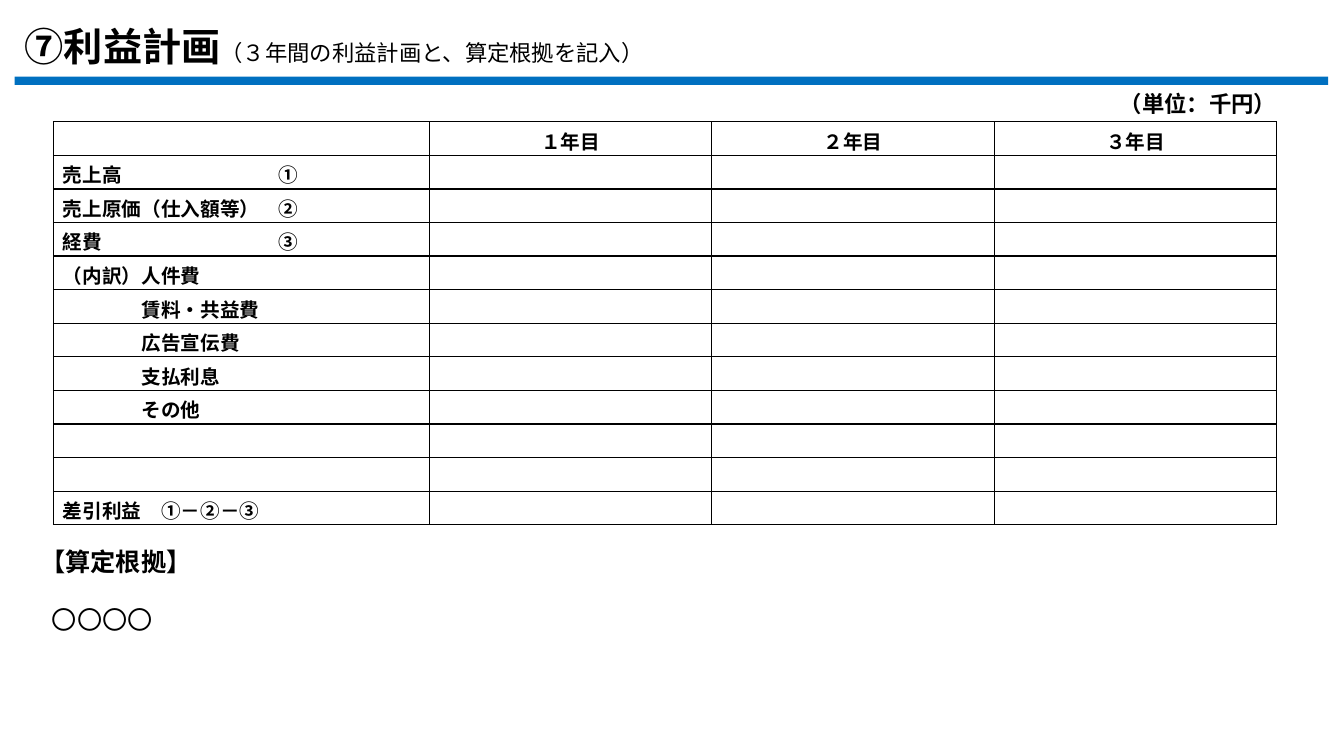
from dataclasses import dataclass

from lxml import etree
from pptx import Presentation
from pptx.dml.color import RGBColor
from pptx.enum.shapes import MSO_SHAPE
from pptx.enum.text import MSO_ANCHOR, MSO_AUTO_SIZE, PP_ALIGN
from pptx.oxml.ns import qn
from pptx.util import Emu, Pt

EMU_PER_PX = 9525
FONT = "Noto Sans CJK JP"
COLORS = {"text": "000000", "bar": "0070C0", "cell": "FFFFFF", "border": "000000"}
RECTANGLE = MSO_SHAPE.RECTANGLE
MIDDLE = MSO_ANCHOR.MIDDLE
TOP = MSO_ANCHOR.TOP
LEFT = PP_ALIGN.LEFT
CENTER = PP_ALIGN.CENTER
NO_AUTOFIT = MSO_AUTO_SIZE.NONE

TABLE_SIZE = 14
ROW_HEIGHT = 32
COLUMN_WIDTHS = (358, 269, 269, 269)
NUMBER_TAB = 205
BREAKDOWN_INDENT = 75


@dataclass(frozen=True)
class Box:
    left: int
    top: int
    width: int
    height: int


@dataclass(frozen=True)
class Run:
    text: str
    size: int
    bold: bool = True


@dataclass(frozen=True)
class Label:
    box: Box
    run: Run


@dataclass(frozen=True)
class Item:
    text: str = ""
    indent: int = 0


TITLE_BOX = Box(14, 16, 1251, 55)
TITLE_RUNS = (
    Run("⑦利益計画", 28),
    Run("（３年間の利益計画と、算定根拠を記入）", 16, False),
)
BAR_BOX = Box(14, 73, 1251, 8)
LABELS = (
    Label(Box(1057, 81, 172, 36), Run("（単位：千円）", 16)),
    Label(Box(29, 516, 172, 38), Run("【算定根拠】", 18)),
    Label(Box(40, 571, 1212, 38), Run("〇〇〇〇", 18, False)),
)
YEARS = ("１年目", "２年目", "３年目")
ITEMS = (
    Item("売上高\t①"),
    Item("売上原価（仕入額等）\t②"),
    Item("経費\t③"),
    Item("（内訳）人件費"),
    Item("賃料・共益費", BREAKDOWN_INDENT),
    Item("広告宣伝費", BREAKDOWN_INDENT),
    Item("支払利息", BREAKDOWN_INDENT),
    Item("その他", BREAKDOWN_INDENT),
    Item(),
    Item(),
    Item("差引利益　①－②－③"),
)


def px(length: int) -> Emu:
    return Emu(length * EMU_PER_PX)


def color(name: str) -> RGBColor:
    return RGBColor.from_string(COLORS[name])


def place(box: Box) -> tuple[Emu, Emu, Emu, Emu]:
    return px(box.left), px(box.top), px(box.width), px(box.height)


def add_run(paragraph, content: Run) -> None:
    run = paragraph.add_run()
    run.text = content.text
    run.font.size = Pt(content.size)
    run.font.bold = content.bold
    run.font.name = FONT
    run.font.color.rgb = color("text")
    east_asian = etree.SubElement(run.font._element, qn("a:ea"))
    east_asian.set("typeface", FONT)


def format_title(slide) -> None:
    title = slide.shapes.title
    title.left, title.top, title.width, title.height = place(TITLE_BOX)
    frame = title.text_frame
    frame.auto_size = NO_AUTOFIT
    frame.vertical_anchor = MIDDLE
    paragraph = frame.paragraphs[0]
    paragraph.alignment = LEFT
    for run in TITLE_RUNS:
        add_run(paragraph, run)


def add_bar(slide) -> None:
    bar = slide.shapes.add_shape(RECTANGLE, *place(BAR_BOX))
    bar.shadow.inherit = False
    bar.fill.solid()
    bar.fill.fore_color.rgb = color("bar")
    bar.line.fill.background()


def add_label(slide, label: Label) -> None:
    frame = slide.shapes.add_textbox(*place(label.box)).text_frame
    frame.word_wrap = True
    frame.vertical_anchor = TOP
    add_run(frame.paragraphs[0], label.run)


def add_borders(cell) -> None:
    properties = cell._tc.get_or_add_tcPr()
    for position, side in enumerate(("lnL", "lnR", "lnT", "lnB")):
        line = etree.Element(qn(f"a:{side}"), w=str(Pt(1)))
        fill = etree.SubElement(line, qn("a:solidFill"))
        etree.SubElement(fill, qn("a:srgbClr"), val=COLORS["border"])
        properties.insert(position, line)


def fill_cell(cell, item: Item, alignment: PP_ALIGN) -> None:
    cell.fill.solid()
    cell.fill.fore_color.rgb = color("cell")
    cell.vertical_anchor = MIDDLE
    cell.margin_left = cell.margin_right = px(9)
    cell.margin_top, cell.margin_bottom = px(4), px(0)
    add_borders(cell)
    paragraph = cell.text_frame.paragraphs[0]
    paragraph.alignment = alignment
    properties = paragraph._p.get_or_add_pPr()
    if item.indent:
        properties.set("marL", str(px(item.indent)))
        properties.set("indent", "0")
    if "\t" in item.text:
        tabs = etree.SubElement(properties, qn("a:tabLst"))
        etree.SubElement(tabs, qn("a:tab"), pos=str(px(NUMBER_TAB)), algn="l")
    if item.text:
        add_run(paragraph, Run(item.text, TABLE_SIZE))
    else:
        etree.SubElement(paragraph._p, qn("a:endParaRPr"), sz=str(TABLE_SIZE * 100))


def add_profit_table(slide) -> None:
    header = (Item(), *(Item(year) for year in YEARS))
    rows = [header] + [(item, *(Item() for _ in YEARS)) for item in ITEMS]
    box = Box(51, 116, sum(COLUMN_WIDTHS), ROW_HEIGHT * len(rows))
    table = slide.shapes.add_table(len(rows), len(COLUMN_WIDTHS), *place(box)).table
    for column, width in zip(table.columns, COLUMN_WIDTHS):
        column.width = px(width)
    for row_index, row in enumerate(rows):
        table.rows[row_index].height = px(ROW_HEIGHT)
        for column_index, item in enumerate(row):
            alignment = CENTER if column_index else LEFT
            fill_cell(table.cell(row_index, column_index), item, alignment)


def main() -> None:
    presentation = Presentation()
    presentation.slide_width, presentation.slide_height = px(1280), px(720)
    slide = presentation.slides.add_slide(presentation.slide_layouts[5])
    add_bar(slide)
    format_title(slide)
    add_profit_table(slide)
    for label in LABELS:
        add_label(slide, label)
    presentation.save("out.pptx")


if __name__ == "__main__":
    main()
